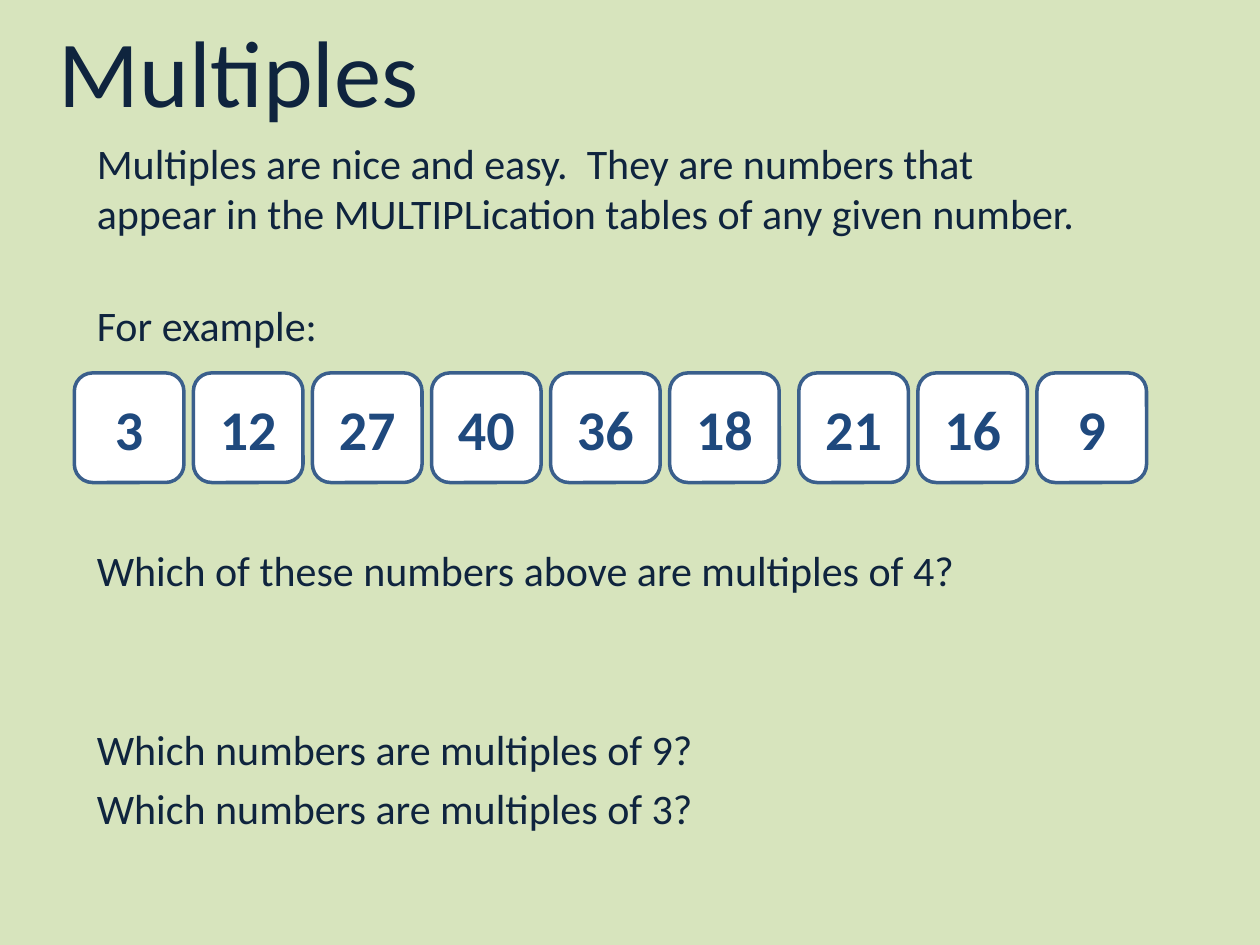
from pptx import Presentation
from pptx.dml.color import RGBColor
from pptx.enum.shapes import MSO_SHAPE
from pptx.enum.text import MSO_ANCHOR, PP_ALIGN
from pptx.util import Inches, Pt

CARD = MSO_SHAPE.ROUNDED_RECTANGLE
MIDDLE = MSO_ANCHOR.MIDDLE
LEFT, CENTER = PP_ALIGN.LEFT, PP_ALIGN.CENTER

COLORS = {"back": "D7E4BD", "ink": "0F243E", "card": "FFFFFF",
          "edge": "3A5F8C", "digit": "1F497D"}
FONT = "Calibri"
WIDTH, HEIGHT = 10, 7.5

TITLE = "Multiples"
# Top, width and height in inches, then the words; \v breaks the line
LINES = [
    (1.04, 7.99, 0.91, "Multiples are nice and easy.  They are numbers that\v"
                       "appear in the MULTIPLication tables of any given number."),
    (2.33, 1.97, 0.5, "For example:"),
    (4.27, 7.07, 0.5, "Which of these numbers above are multiples of 4?"),
    (5.69, 4.98, 0.5, "Which numbers are multiples of 9?"),
    (6.16, 4.98, 0.5, "Which numbers are multiples of 3?"),
]
MARGIN = 0.67
# Left edge of each run of cards, then its numbers
GROUPS = [(0.59, [3, 12, 27, 40, 36, 18]), (6.34, [21, 16, 9])]
CARD_TOP, CARD_SIZE, CARD_STEP = 2.96, 0.87, 0.945


def color(name):
    return RGBColor.from_string(COLORS[name])


def write(shape, words, size=24, ink="ink", bold=False, align=LEFT, wrap=False):
    frame = shape.text_frame
    frame.word_wrap = wrap
    frame.text = words
    para = frame.paragraphs[0]
    para.alignment = align
    for run in para.runs:
        font = run.font
        font.name, font.size, font.bold = FONT, Pt(size), bold
        font.color.rgb = color(ink)


def add_text(slide, box, words, **style):
    write(slide.shapes.add_textbox(*map(Inches, box)), words, **style)


def add_card(slide, left, number):
    box = (left, CARD_TOP, CARD_SIZE, CARD_SIZE)
    card = slide.shapes.add_shape(CARD, *map(Inches, box))
    card.shadow.inherit = False
    card.fill.solid()
    card.fill.fore_color.rgb = color("card")
    card.line.color.rgb = color("edge")
    card.line.width = Pt(2)
    card.text_frame.vertical_anchor = MIDDLE
    write(card, str(number), size=32, ink="digit", bold=True,
          align=CENTER, wrap=True)


def main():
    deck = Presentation()
    deck.slide_width, deck.slide_height = Inches(WIDTH), Inches(HEIGHT)
    slide = deck.slides.add_slide(deck.slide_layouts[6])
    fill = slide.background.fill
    fill.solid()
    fill.fore_color.rgb = color("back")

    add_text(slide, (0.35, 0.05, 3.09, 1.01), TITLE, size=54, align=CENTER)
    for top, width, height, words in LINES:
        add_text(slide, (MARGIN, top, width, height), words)
    for start, numbers in GROUPS:
        for i, number in enumerate(numbers):
            add_card(slide, start + i * CARD_STEP, number)

    deck.save("out.pptx")


if __name__ == "__main__":
    main()
